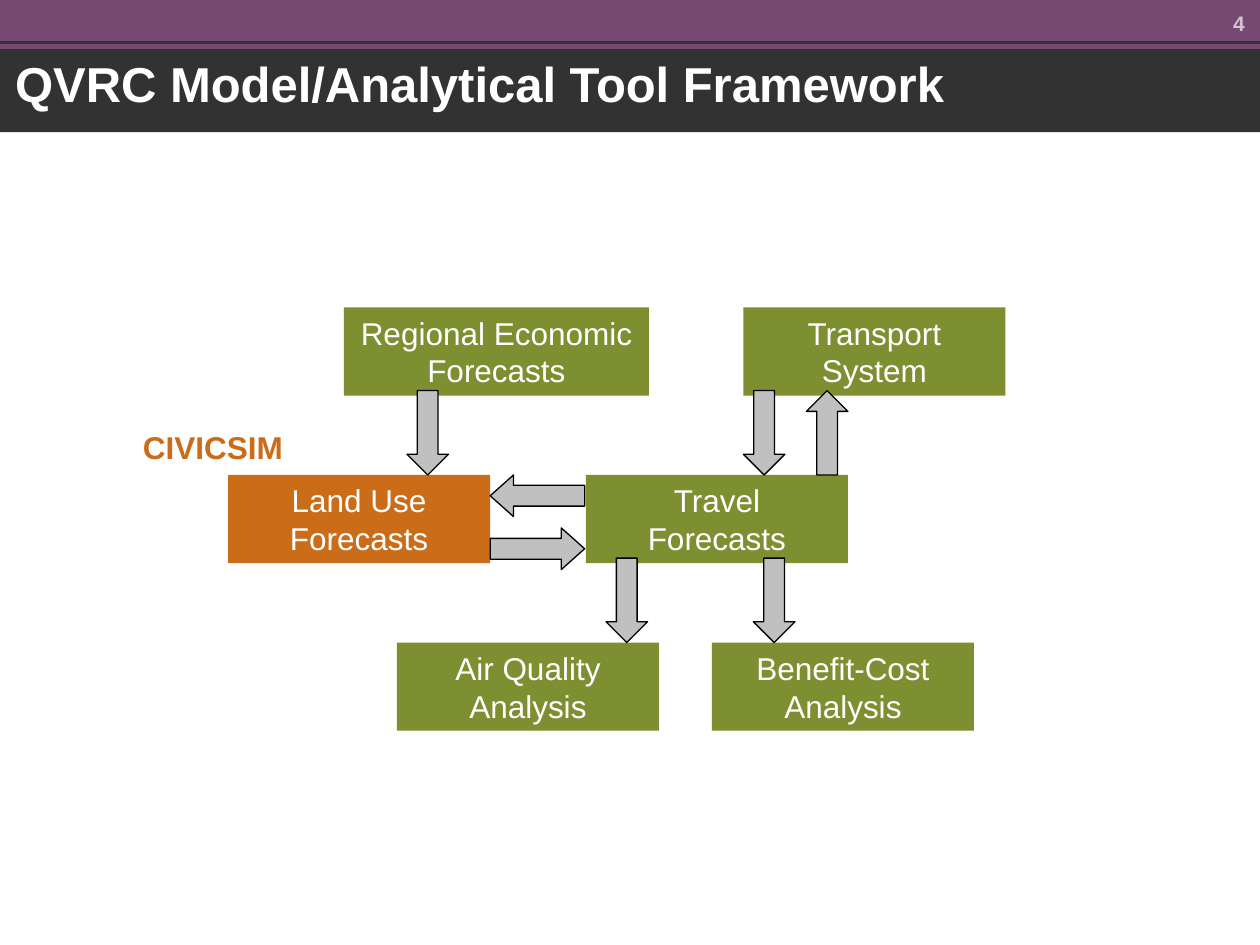
import pptx
import pptx.util
import pptx.dml.color
import pptx.enum.shapes
import pptx.enum.text

Inches = pptx.util.Inches
RGBColor = pptx.dml.color.RGBColor
SHAPE = pptx.enum.shapes.MSO_SHAPE
ALIGN = pptx.enum.text.PP_ALIGN

PURPLE = RGBColor(0x75, 0x49, 0x72)
CHARCOAL = RGBColor(0x32, 0x32, 0x32)
LILAC = RGBColor(0xD7, 0xBF, 0xD6)
GREEN = RGBColor(0x7D, 0x8F, 0x30)
ORANGE = RGBColor(0xCA, 0x6C, 0x18)
GREY = RGBColor(0xC0, 0xC0, 0xC0)
BLACK = RGBColor(0, 0, 0)
WHITE = RGBColor(0xFF, 0xFF, 0xFF)

ROW_STEP = 1.33
STEP_WIDTH, STEP_HEIGHT = 2.08, 0.7
ARROW_WIDTH, ARROW_LENGTH = 0.33, 0.67
ARROW_DROP = 0.66  # from the top of a row to the arrow below it


def write(shape, text, size, color, bold=False, align=ALIGN.CENTER, inset=None, spacing=None):
    frame = shape.text_frame
    frame.word_wrap = True
    frame.vertical_anchor = pptx.enum.text.MSO_ANCHOR.TOP
    if inset is not None:
        for side in ("left", "top", "right", "bottom"):
            setattr(frame, "margin_" + side, Inches(inset))
    para = frame.paragraphs[0]
    para.text = text
    para.alignment = align
    para.line_spacing = spacing
    values = {"name": "Arial", "size": pptx.util.Pt(size), "bold": bold}
    for span in para.runs:
        for key, value in values.items():
            setattr(span.font, key, value)
        span.font.color.rgb = color


def add_shape(page, kind, left, top, width, height, fill, line=None):
    shape = page.shapes.add_shape(
        kind, Inches(left), Inches(top), Inches(width), Inches(height))
    shape.shadow.inherit = False
    shape.fill.solid()
    shape.fill.fore_color.rgb = fill
    if line is None:
        shape.line.fill.background()
    else:
        shape.line.color.rgb = line
        shape.line.width = pptx.util.Pt(0.75)
    return shape


def add_text(page, left, top, width, height, text, *args, **formats):
    box = page.shapes.add_textbox(Inches(left), Inches(top), Inches(width), Inches(height))
    write(box, text, *args, **formats)


def add_header(page, left, top, width):
    # Bands and the thin rule across them
    add_shape(page, SHAPE.RECTANGLE, left, top, width, 0.41, PURPLE)
    add_shape(page, SHAPE.RECTANGLE, left, top + 0.39, width, 0.66, CHARCOAL)
    rule = page.shapes.add_connector(
        pptx.enum.shapes.MSO_CONNECTOR.STRAIGHT,
        Inches(left), Inches(top + 0.34), Inches(left + width), Inches(top + 0.34))
    rule.line.color.rgb = CHARCOAL
    rule.line.width = pptx.util.Pt(1.5)
    properties = rule.element.spPr
    properties.append(pptx.oxml.parse_xml(
        '<a:effectLst xmlns:a="http://schemas.openxmlformats.org/drawingml/2006/main"/>'))
    # Page number and title
    add_text(page, left + width - 0.79, top + 0.08, 0.67, 0.26, "4", 12, LILAC,
             bold=True, align=ALIGN.RIGHT, inset=0)
    add_text(page, left + 0.12, top + 0.48, width - 0.29, 0.42,
             "QVRC Model/Analytical Tool Framework", 28, WHITE,
             bold=True, align=ALIGN.LEFT, inset=0, spacing=0.9)


def add_arrow(page, left, top, length=ARROW_LENGTH, rotation=0, head=0.5):
    arrow = add_shape(page, SHAPE.DOWN_ARROW, left, top, ARROW_WIDTH, length, GREY, BLACK)
    arrow.adjustments[1] = head
    arrow.rotation = rotation


def add_flowchart(page, left, top):
    # Model steps: text, offset, row, width, fill
    steps = [
        ("Regional Economic Forecasts", 0.92, 0, 2.42, GREEN),
        ("Transport System", 4.09, 0, STEP_WIDTH, GREEN),
        ("Land Use Forecasts", 0, 1, STEP_WIDTH, ORANGE),
        ("Travel\vForecasts", 2.84, 1, STEP_WIDTH, GREEN),
        ("Air Quality Analysis", 1.34, 2, STEP_WIDTH, GREEN),
        ("Benefit-Cost Analysis", 3.84, 2, STEP_WIDTH, GREEN),
    ]
    for text, offset, row, width, fill in steps:
        step = add_shape(page, SHAPE.RECTANGLE, left + offset, top + row * ROW_STEP,
                         width, STEP_HEIGHT, fill)
        write(step, text, 18, WHITE)

    # Arrows between rows: offset, row above, rotation
    for offset, row, rotation in [(1.42, 0, 0), (4.09, 0, 0), (4.59, 0, 180),
                                  (3.0, 1, 0), (4.17, 1, 0)]:
        add_arrow(page, left + offset, top + row * ROW_STEP + ARROW_DROP, rotation=rotation)

    # Two-way exchange between land use and travel
    for drop, rotation in [(1.12, 90), (1.54, 270)]:
        add_arrow(page, left + 2.29, top + drop, 0.75, rotation, 0.56)

    # Tool name above the land use step
    add_text(page, left - 1.16, top + 0.91, STEP_WIDTH, 0.4, "CIVICSIM", 18, ORANGE, bold=True)


def main():
    deck = pptx.Presentation()
    deck.slide_width, deck.slide_height = Inches(10), Inches(7.5)
    page = deck.slides.add_slide(deck.slide_layouts[6])
    add_header(page, 0, 0, 10)
    add_flowchart(page, 1.81, 2.44)
    deck.save("out.pptx")


if __name__ == "__main__":
    main()
